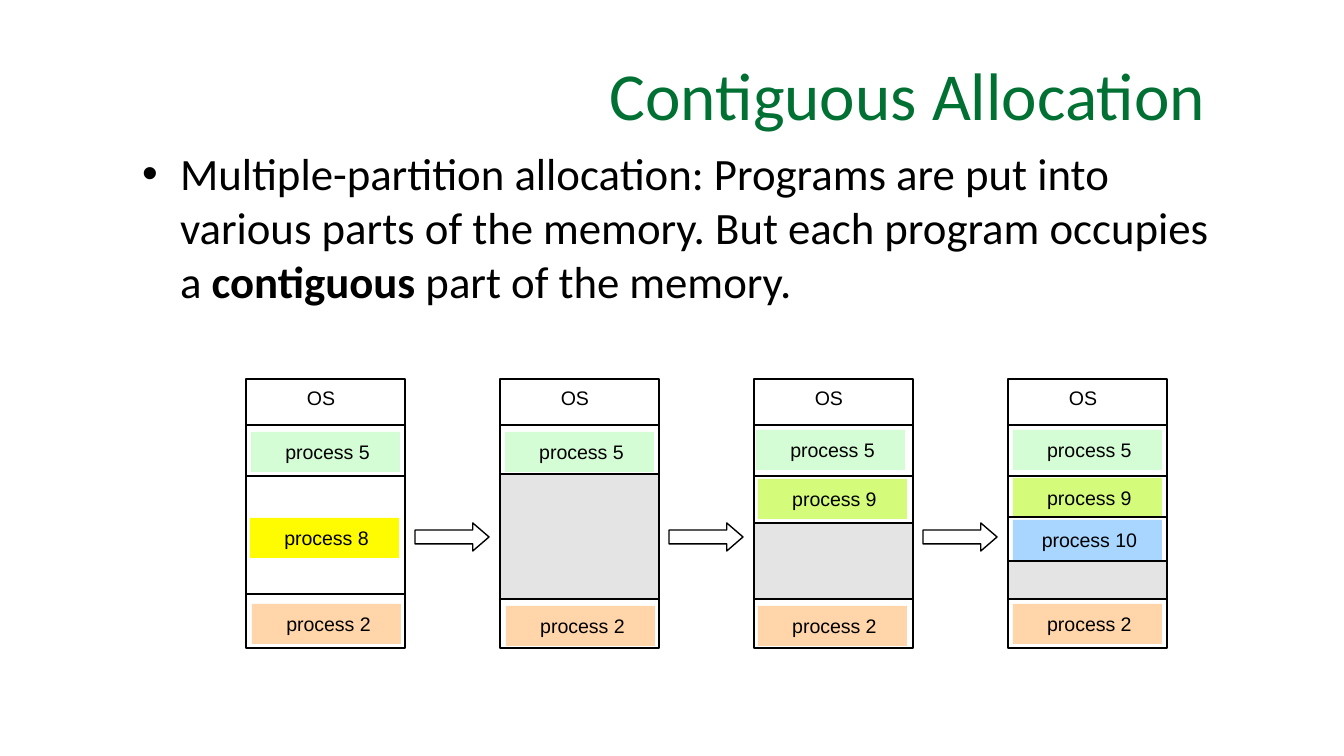
from lxml.etree import SubElement
from pptx import Presentation
from pptx.dml.color import RGBColor
from pptx.enum.shapes import MSO_CONNECTOR, MSO_SHAPE
from pptx.enum.text import MSO_ANCHOR, PP_ALIGN
from pptx.oxml.ns import qn
from pptx.util import Pt

PX = 9144000 / 1344

BLACK = RGBColor(0x00, 0x00, 0x00)
WHITE = RGBColor(0xFF, 0xFF, 0xFF)
TITLE_GREEN = RGBColor(0x00, 0x70, 0x33)
FREE_GREY = RGBColor(0xE4, 0xE4, 0xE4)
MINT = RGBColor(0xD4, 0xFD, 0xD5)
YELLOW = RGBColor(0xFF, 0xFB, 0x00)
LIME = RGBColor(0xD4, 0xFB, 0x79)
BLUE = RGBColor(0xA8, 0xD6, 0xFF)
PEACH = RGBColor(0xFF, 0xD5, 0xA9)

TITLE = {"name": "Calibri", "size": Pt(36), "color": TITLE_GREEN}
BODY = {"name": "Calibri", "size": Pt(24), "color": BLACK}
LABEL = {"name": "Arial", "size": Pt(10.5), "color": BLACK}


def emu(px):
    return round(px * PX)


class MemorySlide:
    inset = 5
    line_width = Pt(0.75)

    def __init__(self, deck):
        self.page = deck.slides.add_slide(deck.slide_layouts[6])

    def fill_text(self, shape, spans, style, align, anchor, margin=4, indent=0, bullet=None):
        frame = shape.text_frame
        settings = {"word_wrap": True, "vertical_anchor": anchor}
        for side in ("left", "right", "top", "bottom"):
            settings["margin_" + side] = emu(self.inset)
        for key, value in settings.items():
            setattr(frame, key, value)
        para = frame.paragraphs[0]
        para.alignment = align
        properties = para._p.get_or_add_pPr()
        properties.set("marL", str(emu(margin)))
        properties.set("indent", str(emu(indent)))
        if bullet:
            SubElement(properties, qn("a:buFont"), typeface="Arial")
            SubElement(properties, qn("a:buChar"), char=bullet)
        for words, bold in spans:
            span = para.add_run()
            span.text = words
            for key, value in {**style, "bold": bold}.items():
                if key == "color":
                    span.font.color.rgb = value
                else:
                    setattr(span.font, key, value)

    def text(self, left, top, width, height, spans, style, align,
             anchor=MSO_ANCHOR.MIDDLE, **layout):
        box = self.page.shapes.add_textbox(*map(emu, (left, top, width, height)))
        self.fill_text(box, spans, style, align, anchor, **layout)

    def shape(self, left, top, width, height, fill, outlined=True, kind=MSO_SHAPE.RECTANGLE):
        shape = self.page.shapes.add_shape(kind, *map(emu, (left, top, width, height)))
        shape.shadow.inherit = False
        shape.fill.solid()
        shape.fill.fore_color.rgb = fill
        if outlined:
            shape.line.color.rgb = BLACK
            shape.line.width = self.line_width
        else:
            shape.line.fill.background()
        return shape

    def label(self, left, top, width, height, words, fill):
        box = self.shape(left, top, width, height, fill, outlined=False)
        self.fill_text(box, [(words, False)], LABEL, PP_ALIGN.CENTER, MSO_ANCHOR.MIDDLE)

    def arrow(self, left, top, width, height):
        arrow = self.shape(left, top, width, height, WHITE, kind=MSO_SHAPE.RIGHT_ARROW)
        arrow.adjustments[0] = 0.5
        arrow.adjustments[1] = 0.58

    def divider(self, left, top, width):
        line = self.page.shapes.add_connector(
            MSO_CONNECTOR.STRAIGHT, *map(emu, (left, top, left + width, top)))
        line.line.color.rgb = BLACK
        line.line.width = self.line_width
        SubElement(line._element.spPr, qn("a:effectLst"))


# Memory map geometry
MAP_LEFT, MAP_TOP, MAP_WIDTH, MAP_HEIGHT, MAP_STEP = 246, 379, 159, 269, 254
LABEL_WIDTH, LABEL_HEIGHT = 149, 40
DIVIDERS = (425, 476, 594)
HOLE_BOTTOM = 599

# Each stage: labels as (name, fill, offset, top), top of the free hole, extra dividers
STAGES = [
    ([("process 5", MINT, 5, 432), ("process 8", YELLOW, 4, 518),
      ("process 2", PEACH, 6, 604)], None, ()),
    ([("process 5", MINT, 5, 432), ("process 2", PEACH, 6, 606)], 474, ()),
    ([("process 5", MINT, 2, 430), ("process 9", LIME, 4, 479),
      ("process 2", PEACH, 4, 606)], 523, ()),
    ([("process 5", MINT, 5, 430), ("process 9", LIME, 5, 478),
      ("process 10", BLUE, 5, 520), ("process 2", PEACH, 5, 604)], 561, (517,)),
]


def main():
    deck = Presentation()
    deck.slide_width, deck.slide_height = emu(1344), emu(756)
    slide = MemorySlide(deck)

    # Heading and explanation
    slide.text(218, 31, 992, 126, [("Contiguous Allocation", False)], TITLE, PP_ALIGN.RIGHT)
    slide.text(133, 141, 1109, 212, [
        ("Multiple-partition allocation: Programs are put into various parts of the memory. "
         "But each program occupies a ", False),
        ("contiguous", True),
        (" part of the memory.", False),
    ], BODY, PP_ALIGN.LEFT, MSO_ANCHOR.TOP, margin=42, indent=-38, bullet="•")

    # Memory maps, one per stage
    for index, (labels, hole_top, extra_dividers) in enumerate(STAGES):
        left = MAP_LEFT + index * MAP_STEP
        slide.shape(left, MAP_TOP, MAP_WIDTH, MAP_HEIGHT, WHITE)
        for top in DIVIDERS:
            slide.divider(left, top, MAP_WIDTH)
        slide.text(left + 44, 378, 58, LABEL_HEIGHT, [("OS", False)], LABEL, PP_ALIGN.CENTER)
        for words, fill, offset, top in labels:
            slide.label(left + offset, top, LABEL_WIDTH, LABEL_HEIGHT, words, fill)
        if hole_top:
            slide.shape(left, hole_top, MAP_WIDTH, HOLE_BOTTOM - hole_top, FREE_GREY)
        for top in extra_dividers:
            slide.divider(left, top, MAP_WIDTH)

    # Arrows between stages
    for index in range(len(STAGES) - 1):
        slide.arrow(MAP_LEFT + index * MAP_STEP + 169, 523, 74, 28)

    deck.save("out.pptx")


if __name__ == "__main__":
    main()
